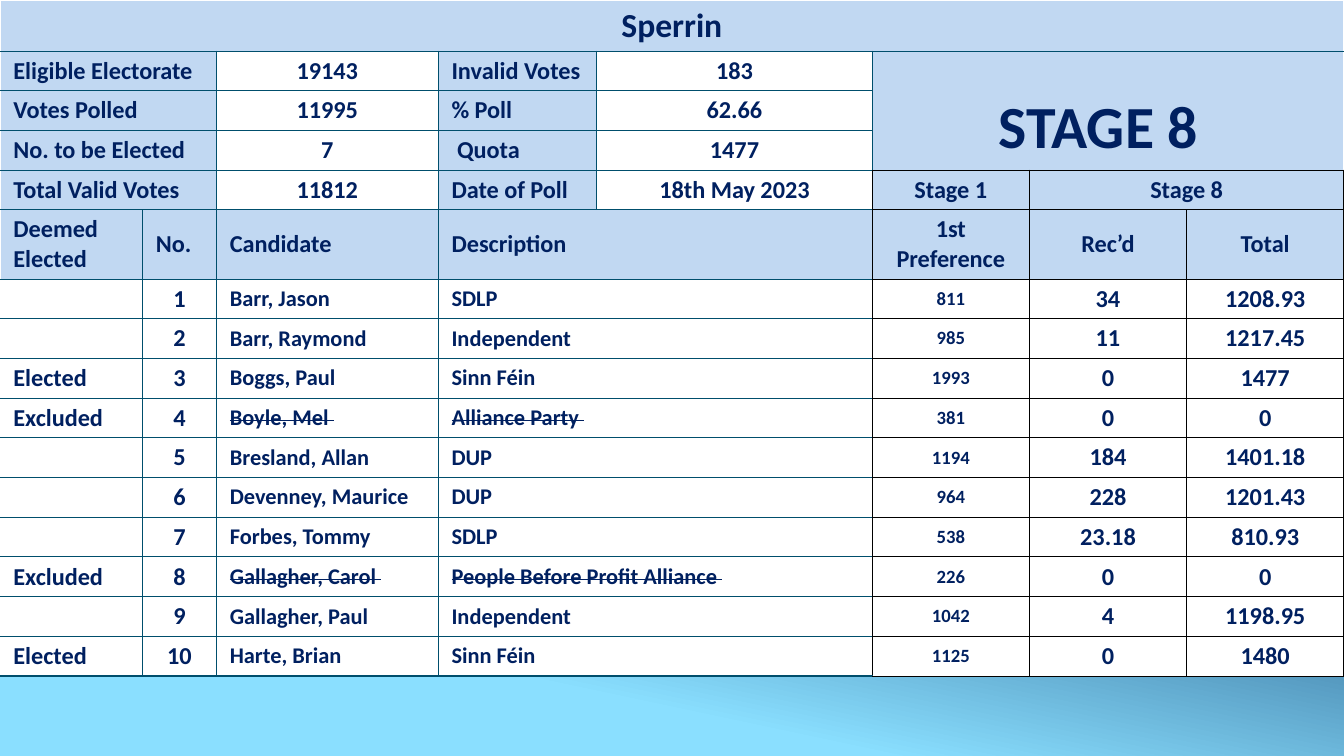
from dataclasses import dataclass
from lxml.etree import SubElement as Sub
from pptx import Presentation
from pptx.dml.color import RGBColor
from pptx.enum.text import MSO_ANCHOR as Anchor, PP_ALIGN as Align
from pptx.oxml.ns import qn
from pptx.slide import Slide
from pptx.table import Table, _Cell as Box
from pptx.util import Inches, Pt

WIDE = 10
HIGH = WIDE * 9 / 16
COLS = [1.06, 0.55, 1.65, 1.18, 2.05, 1.17, 1.17, 1.17]
ROWS = [0.37] + [0.28] * 4 + [0.48] + [0.28] * 10
NAVY, SKY, WHITE = "002060", "C1D8F2", "FFFFFF"
PENS = {"W": (WHITE, 1), "T": ("004E6C", 0.75), "K": ("000000", 0.5)}
SIDES = ("lnL", "lnR", "lnT", "lnB")
LEAD, TEAL, LAST, BLACK = "WTTT", "TTTT", "TKTT", "KKKK"


@dataclass
class Cell:
    row: int
    col: int
    text: str
    edge: str = TEAL
    fill: str = WHITE
    size: float = 13
    mid: bool = True
    wide: int = 1
    tall: int = 1
    low: bool = False
    cut: bool = False
    tail: str = ""


FACTS = [
    ("Eligible Electorate", "19143", "Invalid Votes", "183"),
    ("Votes Polled", "11995", "% Poll", "62.66"),
    ("No. to be Elected", "7", " Quota", "1477"),
    ("Total Valid Votes", "11812", "Date of Poll", "18th May 2023"),
]
POLL = [
    ("", "Barr, Jason", "SDLP", "811", "34", "1208.93"),
    ("", "Barr, Raymond", "Independent", "985", "11", "1217.45"),
    ("Elected", "Boggs, Paul", "Sinn Féin", "1993", "0", "1477"),
    ("Excluded", "Boyle, Mel ", "Alliance Party ", "381", "0", "0"),
    ("", "Bresland, Allan", "DUP", "1194", "184", "1401.18"),
    ("", "Devenney, Maurice", "DUP", "964", "228", "1201.43"),
    ("", "Forbes, Tommy", "SDLP", "538", "23.18", "810.93"),
    ("Excluded", "Gallagher, Carol ", "People Before Profit Alliance ", "226", "0", "0"),
    ("", "Gallagher, Paul", "Independent", "1042", "4", "1198.95"),
    ("Elected", "Harte, Brian", "Sinn Féin", "1125", "0", "1480"),
]


def paint(color: str) -> RGBColor:
    return RGBColor.from_string(color)


def rule(box: Box, edge: str) -> None:
    props = box._tc.get_or_add_tcPr()
    for side, key in zip(SIDES, edge):
        color, width = PENS[key]
        line = Sub(props, qn(f"a:{side}"), w=str(Pt(width)))
        Sub(Sub(line, qn("a:solidFill")), qn("a:srgbClr"), val=color)


def write(box: Box, text: str, size: float, cut: bool) -> None:
    run = box.text_frame.paragraphs[0].add_run()
    run.text = text
    font = run.font
    font.name, font.size, font.bold = "Calibri", Pt(size), True
    font.color.rgb = paint(NAVY)
    if cut:
        run._r.get_or_add_rPr().set("strike", "sngStrike")


def draw(table: Table, cell: Cell) -> None:
    box = table.cell(cell.row, cell.col)
    for row in range(cell.row, cell.row + cell.tall):
        for col in range(cell.col, cell.col + cell.wide):
            part = table.cell(row, col)
            rule(part, cell.edge)
            part.fill.solid()
            part.fill.fore_color.rgb = paint(cell.fill)
            if (row, col) != (cell.row, cell.col) or not cell.text:
                Sub(part.text_frame.paragraphs[0]._p, qn("a:endParaRPr"), sz="1300")
    if cell.wide * cell.tall > 1:
        box.merge(table.cell(cell.row + cell.tall - 1, cell.col + cell.wide - 1))
    box.margin_left = box.margin_right = Inches(0.1)
    box.margin_top = box.margin_bottom = Pt(2.7)
    box.vertical_anchor = Anchor.BOTTOM if cell.low else Anchor.MIDDLE
    box.text_frame.paragraphs[0].alignment = Align.CENTER if cell.mid else Align.LEFT
    if cell.text:
        write(box, cell.text, cell.size, cell.cut)
    if cell.tail:
        write(box, cell.tail, 13, False)


def heads() -> list[Cell]:
    cells = [
        Cell(0, 0, "Sperrin", "WWWT", SKY, 18, wide=8),
        Cell(1, 5, "STAGE 8 ", "TWTK", SKY, 32, wide=3, tall=3, low=True, tail=" "),
        Cell(4, 5, "Stage 1", BLACK, SKY),
        Cell(4, 6, "Stage 8", BLACK, SKY, wide=2),
        Cell(5, 0, "Deemed Elected", LEAD, SKY, mid=False),
        Cell(5, 1, "No.", TEAL, SKY, mid=False),
        Cell(5, 2, "Candidate", TEAL, SKY, mid=False),
        Cell(5, 3, "Description", LAST, SKY, mid=False, wide=2),
    ]
    for col, text in enumerate(("1st Preference", "Rec’d", "Total"), 5):
        cells.append(Cell(5, col, text, BLACK, SKY))
    return cells


def facts() -> list[Cell]:
    cells = []
    for row, (name, count, label, value) in enumerate(FACTS, 1):
        cells += [
            Cell(row, 0, name, LEAD, SKY, mid=False, wide=2),
            Cell(row, 2, count),
            Cell(row, 3, label, TEAL, SKY, mid=False),
            Cell(row, 4, value, LAST if row == len(FACTS) else TEAL),
        ]
    return cells


def votes() -> list[Cell]:
    cells = []
    for num, (state, name, party, first, gain, total) in enumerate(POLL, 1):
        row, cut = num + 5, state == "Excluded"
        cells += [
            Cell(row, 0, state, LEAD, mid=False),
            Cell(row, 1, str(num)),
            Cell(row, 2, name, size=12, mid=False, cut=cut),
            Cell(row, 3, party, LAST, size=12, mid=False, wide=2, cut=cut),
            Cell(row, 5, first, BLACK, size=10),
            Cell(row, 6, gain, BLACK),
            Cell(row, 7, total, BLACK),
        ]
    return cells


def shade(slide: Slide) -> None:
    fill = slide.background.fill
    fill.gradient()
    fill.gradient_angle = 258
    for stop, (place, color) in zip(fill.gradient_stops, ((0.42, "0D3868"), (0.82, "8ADFFF"))):
        stop.position = place
        stop.color.rgb = paint(color)


def main() -> None:
    deck = Presentation()
    deck.slide_width, deck.slide_height = Inches(WIDE), Inches(HIGH)
    slide = deck.slides.add_slide(deck.slide_layouts[6])
    shade(slide)
    frame = slide.shapes.add_table(len(ROWS), len(COLS), 0, 0, Inches(WIDE), Inches(sum(ROWS)))
    table = frame.table
    table.first_row = table.horz_banding = False
    for col, width in zip(table.columns, COLS):
        col.width = Inches(width)
    for row, height in zip(table.rows, ROWS):
        row.height = Inches(height)
    for cell in heads() + facts() + votes():
        draw(table, cell)
    deck.save("out.pptx")


if __name__ == "__main__":
    main()
